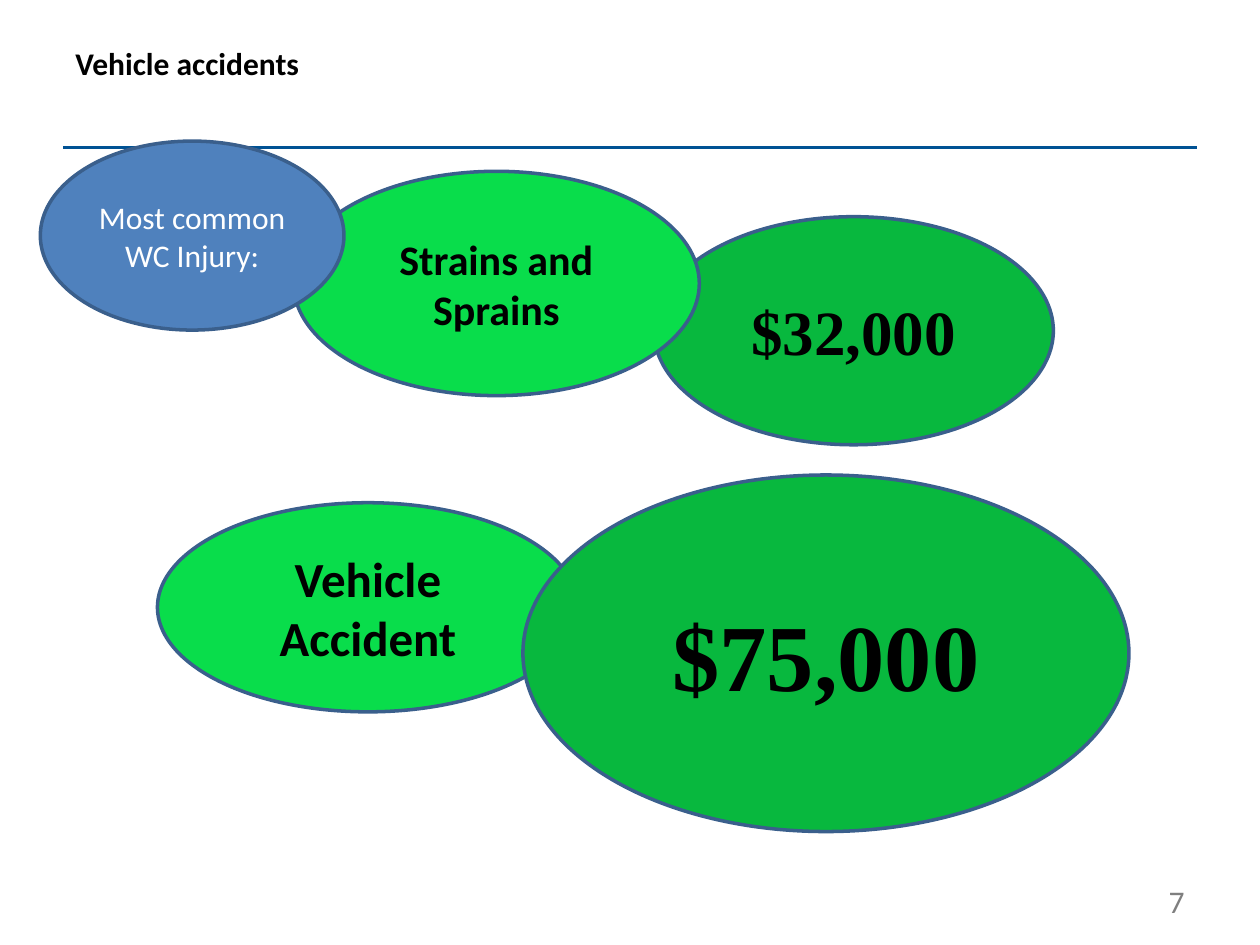
"""Build the vehicle accidents cost slide."""
from lxml.etree import SubElement
from pptx import Presentation
from pptx.dml.color import RGBColor
from pptx.enum.shapes import MSO_CONNECTOR, MSO_SHAPE
from pptx.enum.text import MSO_ANCHOR as ANCHOR, PP_ALIGN as ALIGN
from pptx.oxml.ns import qn
from pptx.util import Inches, Pt


def color(value):
    return RGBColor.from_string(value)


def write(s, text, size, font, fill, bold, align, anchor):
    tf = s.text_frame
    tf.word_wrap = True
    tf.vertical_anchor = anchor
    tf.text = text
    p = tf.paragraphs[0]
    p.alignment = align
    r = p.runs[0]
    r.font.size = Pt(size)
    r.font.name = font
    r.font.bold = bold
    r.font.color.rgb = color(fill)


prs = Presentation()
prs.slide_width, prs.slide_height = Inches(10), Inches(7.5)
slide = prs.slides.add_slide(prs.slide_layouts[6])
shapes = slide.shapes

rule = shapes.add_connector(MSO_CONNECTOR.STRAIGHT, Inches(0.5), Inches(1.17), Inches(9.5), Inches(1.17))
rule.line.color.rgb = color("005294")
rule.line.width = Pt(2)
SubElement(rule.element.spPr, qn("a:effectLst"))

title = shapes.add_textbox(Inches(0.5), Inches(0.3), Inches(9), Inches(0.87))
write(title, "Vehicle accidents", 18, "Calibri", "000000", True, ALIGN.LEFT, ANCHOR.TOP)

number = shapes.add_textbox(Inches(7.17), Inches(6.95), Inches(2.33), Inches(0.4))
write(number, "7", 18, "Calibri", "7F7F7F", False, ALIGN.RIGHT, ANCHOR.TOP)

COST, INJURY, LABEL = "08B83E", "09DD4B", "4F81BD"
SERIF, SANS = "Times New Roman", "Calibri"
ellipses = [
    ((5.19, 1.72, 3.17, 1.81), COST, "$32,000", 36, SERIF, "000000", True),
    ((2.33, 1.36, 3.22, 1.78), INJURY, "Strains and Sprains", 24, SANS, "000000", True),
    ((1.25, 3.99, 3.34, 1.66), INJURY, "Vehicle Accident", 28, SANS, "000000", True),
    ((4.15, 3.77, 4.81, 2.83), COST, "$75,000", 54, SERIF, "000000", True),
    ((0.32, 1.12, 2.41, 1.5), LABEL, "Most common WC Injury:", 18, SANS, "FFFFFF", False),
]
for box, fill, text, size, font, ink, bold in ellipses:
    s = shapes.add_shape(MSO_SHAPE.OVAL, *map(Inches, box))
    s.shadow.inherit = False
    s.fill.solid()
    s.fill.fore_color.rgb = color(fill)
    s.line.color.rgb = color("3A5F8C")
    s.line.width = Pt(2)
    write(s, text, size, font, ink, bold, ALIGN.CENTER, ANCHOR.MIDDLE)

prs.save("out.pptx")
